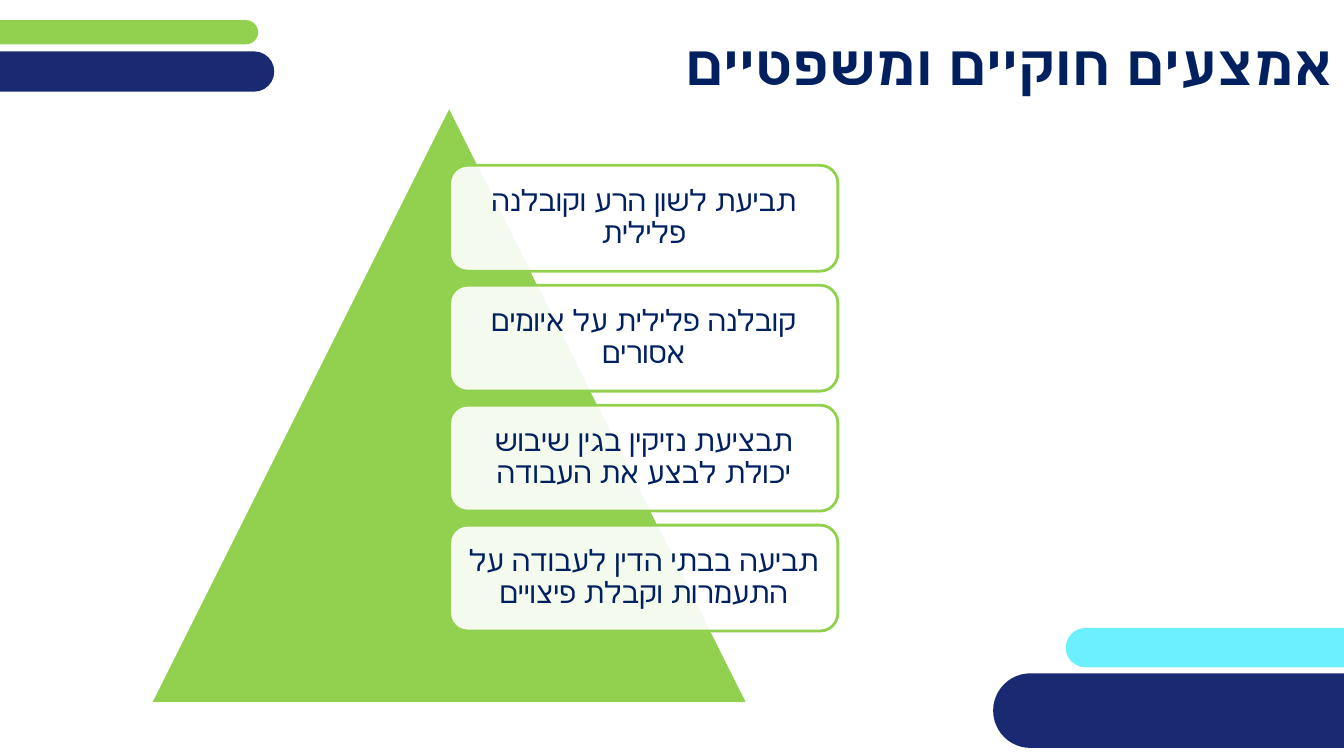
import pptx
import pptx.util
import pptx.dml.color
import pptx.enum.shapes
import pptx.enum.text
import pptx.oxml.ns
from lxml import etree

SCALE = 9144  # EMU per px, 100 px to the inch
FONT = "TeX Gyre Adventor"
GREEN, NAVY, CYAN, INK, WHITE = "92D050", "192A72", "6CF0FF", "002060", "FFFFFF"
KIND = pptx.enum.shapes.MSO_SHAPE
ALIGN = pptx.enum.text.PP_ALIGN

BARS = [
    ((1057, 623, 521, 39), CYAN),
    ((-28, 20, 284, 24), GREEN),
    ((-53, 51, 325, 40), NAVY),
    ((985, 668, 411, 74), NAVY),
]
CLAIMS = [
    "תביעת לשון הרע וקובלנה פלילית",
    "קובלנה פלילית על איומים אסורים",
    "תבציעת נזיקין בגין שיבוש יכולת לבצע את העבודה",
    "תביעה בבתי הדין לעבודה על התעמרות וקבלת פיצויים",
]
CARD_TOP, CARD_STEP = 164, 119


def px(*nums):
    return [pptx.util.Emu(num * SCALE) for num in nums]


def paint(target, code):
    target.solid()
    target.fore_color.rgb = pptx.dml.color.RGBColor.from_string(code)


def add_tag(parent, name, **attrs):
    return etree.SubElement(parent, pptx.oxml.ns.qn(name), **attrs)


def add_form(slide, kind, box, fill, line=None):
    form = slide.shapes.add_shape(kind, *px(*box))
    form.shadow.inherit = False
    paint(form.fill, fill)
    if line:
        paint(form.line.fill, line)
        form.line.width = pptx.util.Pt(2)
    else:
        form.line.fill.background()
    return form


def add_bar(slide, box, fill):
    bar = add_form(slide, KIND.ROUNDED_RECTANGLE, box, fill)
    bar.adjustments[0] = 0.5


def set_text(form, text, size, align, pad, bold=False):
    frame = form.text_frame
    frame.word_wrap = True
    frame.vertical_anchor = pptx.enum.text.MSO_ANCHOR.MIDDLE
    frame.margin_left, frame.margin_right = px(pad, pad)
    frame.margin_top, frame.margin_bottom = px(5, 5)
    para = frame.paragraphs[0]
    para.text = text
    para.alignment = align
    props = para._p.get_or_add_pPr()
    props.set("rtl", "1")
    font = para.font
    font.size = pptx.util.Pt(size)
    font.bold = bold
    font.name = FONT
    paint(font.fill, INK)
    # Hebrew glyphs take the complex-script face
    add_tag(props.find(pptx.oxml.ns.qn("a:defRPr")), "a:cs", typeface=FONT)
    return para


def add_card(slide, top, text):
    card = add_form(slide, KIND.ROUNDED_RECTANGLE, (446, top, 385, 105), WHITE, GREEN)
    tint = card.fill._xPr.find(".//" + pptx.oxml.ns.qn("a:srgbClr"))
    add_tag(tint, "a:alpha", val="90000")
    para = set_text(card, text, 21, ALIGN.CENTER, 9)
    para.line_spacing = 0.9


def main():
    deck = pptx.Presentation()
    deck.slide_width, deck.slide_height = px(1333, 750)
    slide = deck.slides.add_slide(deck.slide_layouts[6])

    # Corner bars
    for box, fill in BARS:
        add_bar(slide, box, fill)

    # Title
    title = slide.shapes.add_textbox(*px(0, 23, 1333, 79))
    set_text(title, "אמצעים חוקיים ומשפטיים", 40, ALIGN.RIGHT, 10, True)

    # Pyramid with its claims
    add_form(slide, KIND.ISOSCELES_TRIANGLE, (149, 105, 593, 593), GREEN, WHITE)
    for rank, text in enumerate(CLAIMS):
        add_card(slide, CARD_TOP + rank * CARD_STEP, text)

    deck.save("out.pptx")


if __name__ == "__main__":
    main()
